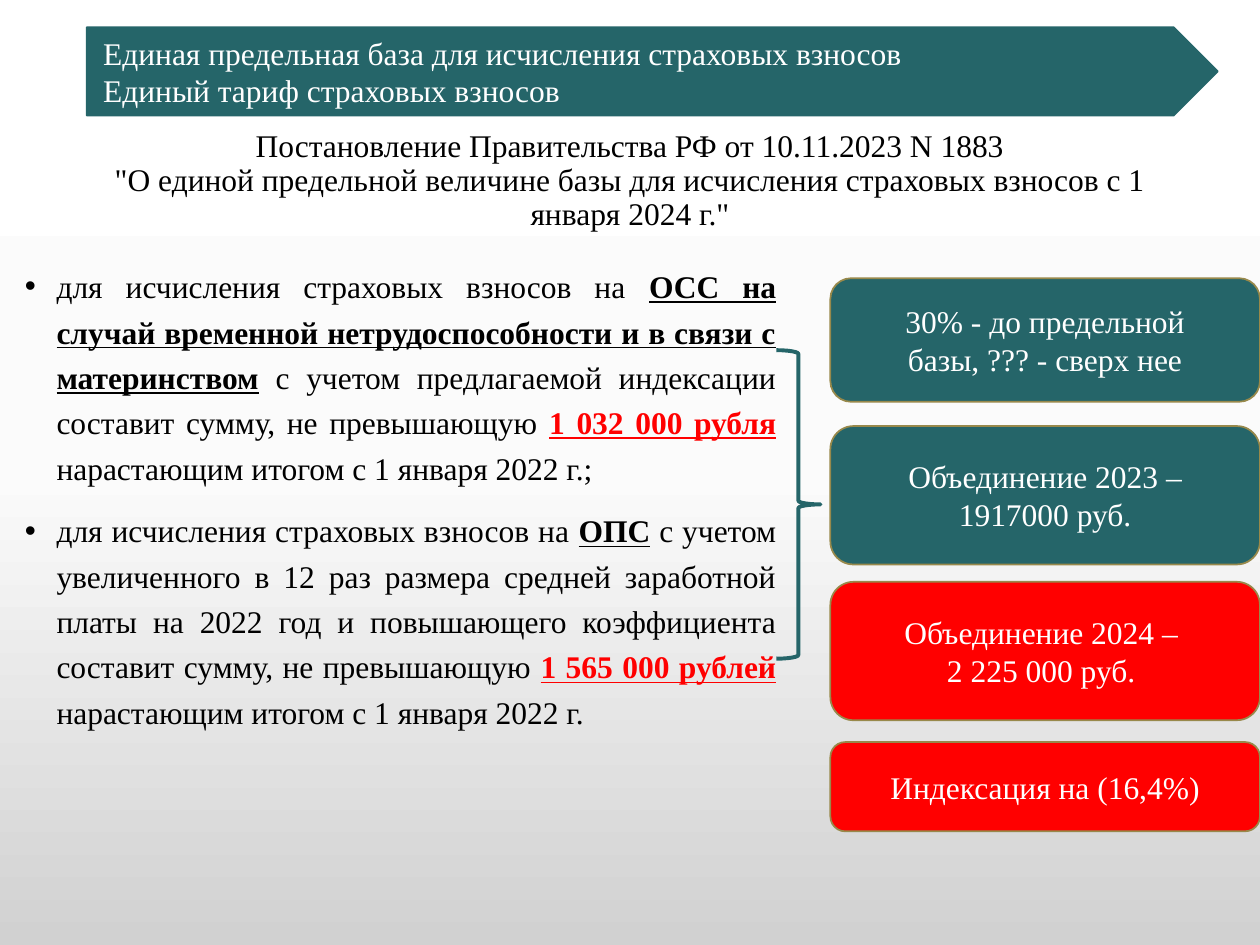
"""Build the slide on the single base limit for insurance contributions."""
from copy import deepcopy

from lxml import etree
from pptx import Presentation
from pptx.dml.color import RGBColor
from pptx.enum.shapes import MSO_SHAPE
from pptx.enum.text import MSO_ANCHOR, PP_ALIGN
from pptx.oxml.ns import qn
from pptx.util import Cm, Pt

CENTER, JUSTIFY, LEFT = PP_ALIGN.CENTER, PP_ALIGN.JUSTIFY, PP_ALIGN.LEFT
MIDDLE = MSO_ANCHOR.MIDDLE
PENTAGON, ROUNDED, BRACE = MSO_SHAPE.PENTAGON, MSO_SHAPE.ROUNDED_RECTANGLE, MSO_SHAPE.RIGHT_BRACE
TEAL, RED, GOLD, WHITE, BLACK = "256569", "FF0000", "98894B", "FFFFFF", "000000"


def rgb(code):
    return RGBColor.from_string(code)


def style(paragraph, color, align):
    paragraph.alignment = align
    paragraph.font.name = "Times New Roman"
    paragraph.font.size = Pt(18)
    paragraph.font.color.rgb = rgb(color)


prs = Presentation()
prs.slide_width, prs.slide_height = Cm(25.4), Cm(19.05)
slide = prs.slides.add_slide(prs.slide_layouts[6])

backdrop = slide.background.fill
backdrop.gradient()
backdrop.gradient_angle = 270
stop_list = next(slide.element.iter(qn("a:gsLst")))
stop_list.insert(1, deepcopy(stop_list[0]))
for stop, (position, color) in zip(
    backdrop.gradient_stops, [(0, "FFFFFF"), (0.5, "FBFBFB"), (1, "D1D1D1")]
):
    stop.position = position
    stop.color.rgb = rgb(color)

decree = slide.shapes.add_textbox(Cm(1.75), Cm(2.77), Cm(21.9), Cm(1.78)).text_frame
decree.word_wrap = True
decree.vertical_anchor = MIDDLE
decree.text = (
    "Постановление Правительства РФ от 10.11.2023 N 1883\v"
    '"О единой предельной величине базы для исчисления страховых взносов с 1 января 2024 г."'
)
style(decree.paragraphs[0], BLACK, CENTER)
decree.paragraphs[0].line_spacing = 0.9

opening = "для исчисления страховых взносов на "
closing = " нарастающим итогом с 1 января 2022 г"
limits = [
    ("ОСС на случай временной нетрудоспособности и в связи с материнством",
     " с учетом предлагаемой индексации составит сумму, не превышающую ",
     "1 032 000 рубля", ".;"),
    ("ОПС",
     " с учетом увеличенного в 12 раз размера средней заработной платы на 2022 год "
     "и повышающего коэффициента составит сумму, не превышающую ",
     "1 565 000 рублей", "."),
]
rules = slide.shapes.add_textbox(Cm(0.25), Cm(5.11), Cm(15.65), Cm(11.4)).text_frame
rules.word_wrap = True
for index, (insurance, basis, amount, ending) in enumerate(limits):
    rule = rules.add_paragraph() if index else rules.paragraphs[0]
    style(rule, BLACK, JUSTIFY)
    rule.line_spacing = 1.2
    rule.space_before = Pt(10)
    properties = rule._p.get_or_add_pPr()
    properties.set("marL", str(Cm(0.64)))
    properties.set("indent", str(-Cm(0.64)))
    bullet_font = etree.Element(qn("a:buFont"), typeface="Arial")
    bullet = etree.Element(qn("a:buChar"), char="•")
    properties.find(qn("a:defRPr")).addprevious(bullet_font)
    bullet_font.addnext(bullet)
    for wording in (opening, insurance, basis, amount, closing + ending):
        run = rule.add_run()
        run.text = wording
        if wording in (insurance, amount):
            run.font.bold = run.font.underline = True
        if wording == amount:
            run.font.color.rgb = rgb(RED)

column = (16.74, 8.66)
panels = [
    (PENTAGON, 1.75, 0.55, 22.8, 1.78, TEAL, TEAL, LEFT,
     "Единая предельная\u00a0база для исчисления страховых взносов\nЕдиный тариф страховых взносов"),
    (ROUNDED, column[0], 5.61, column[1], 2.49, TEAL, GOLD, CENTER,
     "30% - до предельной базы, ??? - сверх нее"),
    (ROUNDED, column[0], 8.59, column[1], 2.79, TEAL, GOLD, CENTER,
     "Объединение 2023 – 1917000 руб."),
    (ROUNDED, column[0], 11.73, column[1], 2.79, RED, GOLD, CENTER,
     "Объединение 2024 – \n2 225 000 руб. "),
    (ROUNDED, column[0], 14.96, column[1], 1.8, RED, GOLD, CENTER,
     "Индексация на (16,4%)"),
]
for outline, left, top, width, height, fill, edge, align, wording in panels:
    panel = slide.shapes.add_shape(outline, Cm(left), Cm(top), Cm(width), Cm(height))
    panel.shadow.inherit = False
    panel.fill.solid()
    panel.fill.fore_color.rgb = rgb(fill)
    panel.line.color.rgb = rgb(edge)
    panel.line.width = Pt(1)
    frame = panel.text_frame
    frame.word_wrap = True
    frame.vertical_anchor = MIDDLE
    frame.margin_left = frame.margin_right = Cm(0.33)
    frame.margin_top = frame.margin_bottom = Cm(0.18)
    frame.text = wording
    for paragraph in frame.paragraphs:
        style(paragraph, WHITE, align)

brace = slide.shapes.add_shape(BRACE, Cm(15.65), Cm(7.06), Cm(0.89), Cm(6.22))
brace.shadow.inherit = False
brace.fill.background()
brace.line.color.rgb = rgb(TEAL)
brace.line.width = Pt(2.25)

prs.save("out.pptx")
